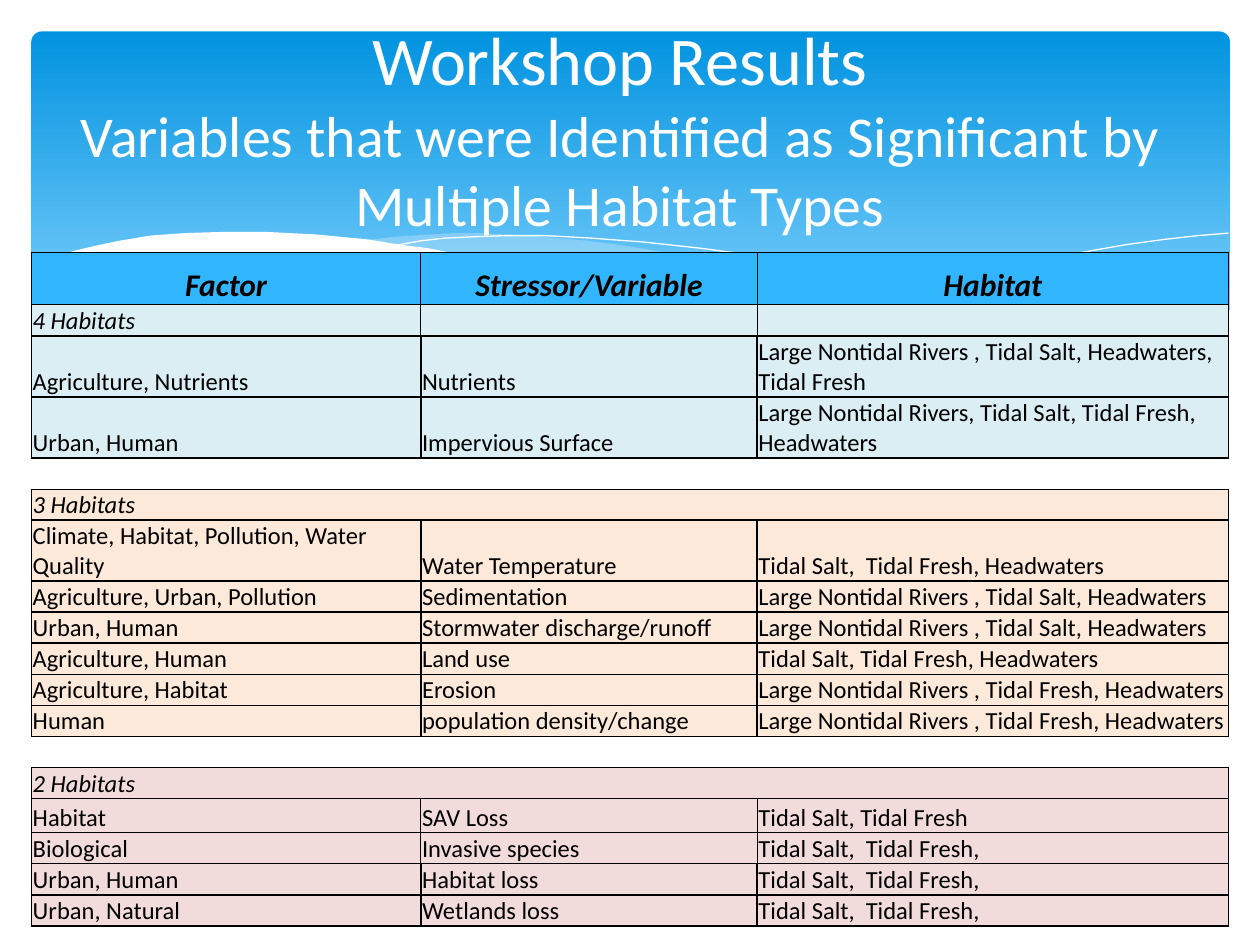
import pptx
import pptx.util
import pptx.enum.shapes
import pptx.enum.text
import pptx.dml.color
import pptx.oxml.ns
import lxml.etree

PX = 9144
COLORS = {
    "sky_top": "0293E0", "sky_bottom": "83D3FE", "mist": "C6E7FC",
    "white": "FFFFFF", "black": "000000", "header": "31B6FD",
    "four": "DAEEF3", "three": "FDE9D9", "two": "F2DCDB",
}
qn = pptx.oxml.ns.qn


def rgb(name):
    return pptx.dml.color.RGBColor.from_string(COLORS[name])


def write_text(paragraph, text, size=14, color="black", bold=False, italic=False, align="LEFT"):
    paragraph.alignment = getattr(pptx.enum.text.PP_ALIGN, align)
    if not text:
        lxml.etree.SubElement(paragraph._p, qn("a:endParaRPr"), sz=str(size * 100))
        return
    run = paragraph.add_run()
    run.text = text
    run.font.name = "Calibri"
    run.font.size = pptx.util.Pt(size)
    run.font.bold = bold
    run.font.italic = italic
    run.font.color.rgb = rgb(color)


deck = pptx.Presentation()
deck.slide_width = 1000 * PX
deck.slide_height = 750 * PX
slide = deck.slides.add_slide(deck.slide_layouts[5])
shapes = slide.shapes

banner = shapes.add_shape(
    pptx.enum.shapes.MSO_SHAPE.ROUNDED_RECTANGLE, 25 * PX, 25 * PX, 951 * PX, 270 * PX)
banner.adjustments[0] = 0.03
banner.shadow.inherit = False
banner.line.fill.background()
banner.fill.gradient()
banner.fill.gradient_angle = 270
for stop, position, color in zip(banner.fill.gradient_stops, (0, 0.9), ("sky_top", "sky_bottom")):
    stop.position = position
    stop.color.rgb = rgb(color)

right_swell = [
    (975, 200), (948, 204), (921, 210), (891, 216), (861, 223), (805, 237), (753, 248),
    (706, 257), (661, 265), (691, 269), (719, 272), (745, 275), (781, 277), (814, 278),
    (854, 276), (889, 272), (921, 265), (949, 257), (976, 247), (976, 200)]
middle_swell = [
    (893, 273), (837, 265), (775, 254), (706, 240), (629, 222), (598, 214), (569, 208),
    (541, 203), (514, 198), (489, 194), (465, 191), (442, 189), (420, 187), (399, 186),
    (380, 185), (361, 185), (344, 186), (313, 188), (286, 191), (323, 196), (362, 203),
    (404, 211), (449, 222), (530, 240), (601, 255), (665, 266), (722, 274), (773, 277),
    (818, 278), (857, 277)]
long_crest = [
    (309, 195), (318, 194), (335, 191), (353, 189), (374, 188), (401, 187), (433, 187),
    (469, 189), (510, 192), (556, 197), (608, 204), (665, 213), (727, 226), (795, 241),
    (869, 261), (907, 272)]
right_crest = [
    (613, 257), (653, 246), (695, 235), (748, 223), (806, 210), (866, 199), (895, 194),
    (924, 190), (951, 187), (975, 185)]
white_wave = [
    (977, 246), (950, 256), (920, 265), (887, 271), (850, 275), (809, 277), (761, 275),
    (708, 270), (648, 262), (579, 250), (503, 233), (447, 220), (418, 213), (391, 207),
    (365, 202), (340, 197), (316, 194), (292, 190), (271, 188), (250, 186), (230, 185),
    (211, 184), (177, 184), (146, 185), (119, 187), (95, 191), (76, 195), (59, 199),
    (46, 203), (36, 207), (23, 213), (23, 329), (977, 329)]

for points, color, opacity in (
        (right_swell, "mist", 29), (middle_swell, "mist", 40),
        (long_crest, "white", 0), (right_crest, "white", 0), (white_wave, "white", 100)):
    outline = shapes.build_freeform(*points[0], scale=PX)
    outline.add_line_segments(points[1:], close=opacity > 0)
    wave = outline.convert_to_shape()
    wave.shadow.inherit = False
    if opacity:
        wave.line.fill.background()
        wave.fill.solid()
        wave.fill.fore_color.rgb = rgb(color)
        tint = wave._element.spPr.find(".//" + qn("a:srgbClr"))
        lxml.etree.SubElement(tint, qn("a:alpha"), val=str(opacity * 1000))
    else:
        wave.fill.background()
        wave.line.color.rgb = rgb(color)
        wave.line.width = pptx.util.Pt(0)

BLANK = (24, None, 0, 0.5, ("", "", ""))
rows = [
    (42, "header", 0.5, 0.5, ("Factor", "Stressor/Variable", "Habitat")),
    (24, "four", 0.5, 1, ("4 Habitats", "", "")),
    (48, "four", 1, 1, ("Agriculture, Nutrients", "Nutrients",
                        "Large Nontidal Rivers , Tidal Salt, Headwaters, Tidal Fresh")),
    (48, "four", 1, 1, ("Urban, Human", "Impervious Surface",
                        "Large Nontidal Rivers, Tidal Salt, Tidal Fresh, Headwaters")),
    BLANK,
    (24, "three", 0.5, 1, ("3 Habitats", "", "")),
    (48, "three", 1, 1, ("Climate, Habitat, Pollution, Water Quality", "Water Temperature",
                         "Tidal Salt,  Tidal Fresh, Headwaters")),
    (24, "three", 1, 1, ("Agriculture, Urban, Pollution", "Sedimentation",
                         "Large Nontidal Rivers , Tidal Salt, Headwaters")),
    (24, "three", 1, 1, ("Urban, Human", "Stormwater discharge/runoff",
                         "Large Nontidal Rivers , Tidal Salt, Headwaters")),
    (24, "three", 1, 1, ("Agriculture, Human", "Land use",
                         "Tidal Salt, Tidal Fresh, Headwaters")),
    (24, "three", 1, 1, ("Agriculture, Habitat", "Erosion",
                         "Large Nontidal Rivers , Tidal Fresh, Headwaters")),
    (24, "three", 1, 1, ("Human", "population density/change",
                         "Large Nontidal Rivers , Tidal Fresh, Headwaters")),
    BLANK,
    (24, "two", 0.5, 0.5, ("2 Habitats", "", "")),
    (27, "two", 0.5, 0.5, ("Habitat", "SAV Loss", "Tidal Salt, Tidal Fresh")),
    (24, "two", 0.5, 1, ("Biological", "Invasive species", "Tidal Salt,  Tidal Fresh,")),
    (24, "two", 1, 1, ("Urban, Human", "Habitat loss", "Tidal Salt,  Tidal Fresh,")),
    (24, "two", 1, 1, ("Urban, Natural", "Wetlands loss", "Tidal Salt,  Tidal Fresh,")),
]
habitats = shapes.add_table(len(rows), 3, 25 * PX, 200 * PX, 950 * PX, 532 * PX).table
habitats.first_row = False
habitats.horz_banding = False
habitats._tbl.tblPr.find(qn("a:tableStyleId")).text = "{2D5ABB26-0587-4C30-8999-92F81FD0307C}"
for column, width in zip(habitats.columns, (309, 267, 374)):
    column.width = width * PX

top = 0.5
for r, (height, color, side, bottom, texts) in enumerate(rows):
    habitats.rows[r].height = height * PX
    is_header = color == "header"
    is_section = texts[0].endswith(" Habitats")
    is_open = is_section and color != "four"
    for c, text in enumerate(texts):
        cell = habitats.cell(r, c)
        cell.margin_left = cell.margin_right = cell.margin_top = PX
        cell.margin_bottom = 0
        cell.vertical_anchor = pptx.enum.text.MSO_ANCHOR.BOTTOM
        write_text(cell.text_frame.paragraphs[0], text, size=18 if is_header else 14,
                   bold=is_header, italic=is_header or is_section,
                   align="CENTER" if is_header else "LEFT")
        left = 0 if is_open and c > 0 else side
        right = 0 if is_open and c < 2 else side
        for edge, width in (("L", left), ("R", right), ("T", top), ("B", bottom)):
            if width:
                border = lxml.etree.SubElement(
                    cell._tc.get_or_add_tcPr(), qn("a:ln" + edge), w=str(int(width * 12700)))
                paint = lxml.etree.SubElement(border, qn("a:solidFill"))
                lxml.etree.SubElement(paint, qn("a:srgbClr"), val=COLORS["black"])
        if color:
            cell.fill.solid()
            cell.fill.fore_color.rgb = rgb(color)
        else:
            cell.fill.background()
    top = bottom

title = shapes.title
title.left, title.top, title.width, title.height = (n * PX for n in (42, 33, 900, 137))
title.text_frame.word_wrap = True
title.text_frame.auto_size = pptx.enum.text.MSO_AUTO_SIZE.NONE
title.text_frame.vertical_anchor = pptx.enum.text.MSO_ANCHOR.MIDDLE
heading = title.text_frame.paragraphs[0]
write_text(heading, "Workshop Results", size=39, color="white", align="CENTER")
heading.add_line_break()
write_text(heading, "Variables that were Identified as Significant by Multiple Habitat Types",
           size=33, color="white", align="CENTER")
shapes._spTree.append(title._element)

deck.save("out.pptx")
